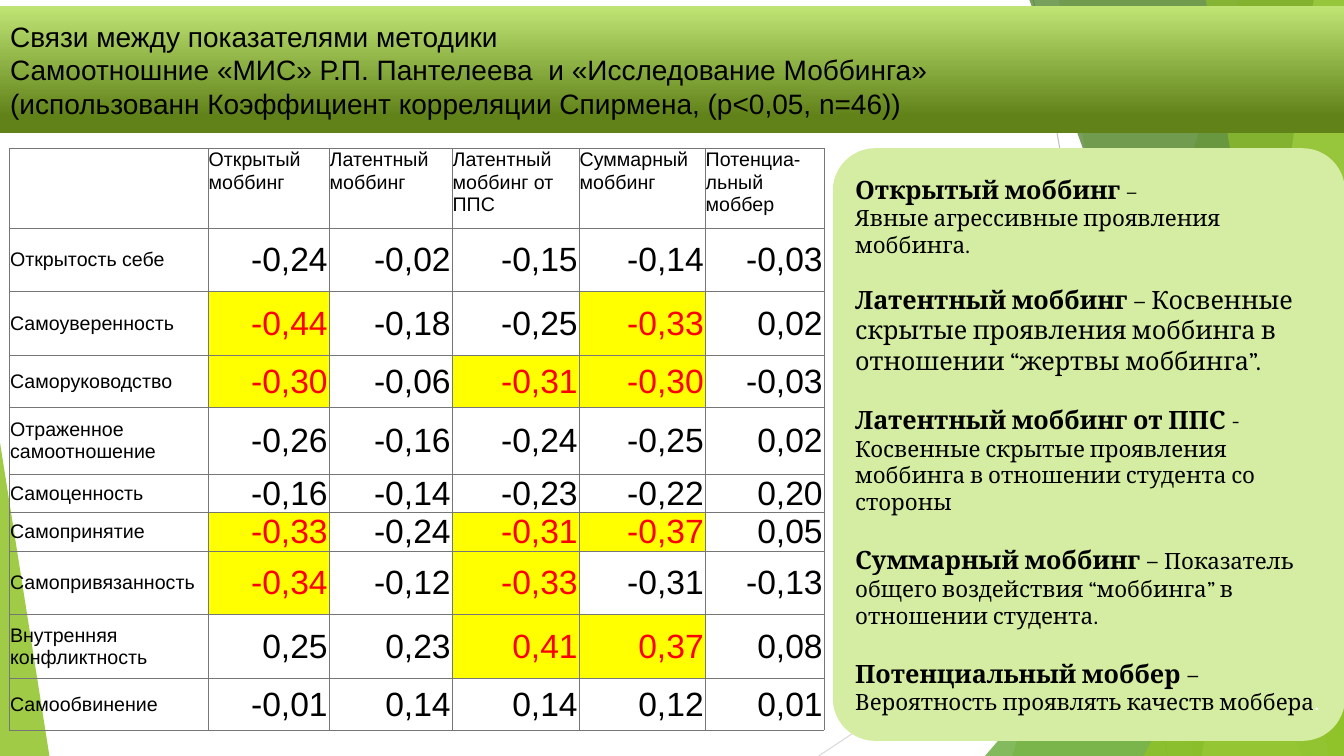
from lxml import etree
from pptx import Presentation
from pptx.dml.color import RGBColor
from pptx.enum.shapes import MSO_CONNECTOR, MSO_SHAPE
from pptx.enum.text import MSO_ANCHOR, PP_ALIGN
from pptx.oxml import parse_xml
from pptx.oxml.ns import qn
from pptx.util import Inches, Pt

LEFT, RIGHT = PP_ALIGN.LEFT, PP_ALIGN.RIGHT
TOP, MIDDLE = MSO_ANCHOR.TOP, MSO_ANCHOR.MIDDLE
A_NS = "http://schemas.openxmlformats.org/drawingml/2006/main"
WIDE, HIGH = 13.33, 7.5

TITLE = [
    "Связи между показателями методики\v"
    "Самоотношние «МИС» Р.П. Пантелеева  и «Исследование Моббинга»",
    "(использованн Коэффициент корреляции Спирмена, (р<0,05, n=46))",
]
HEADS = ["", "Открытый моббинг", "Латентный моббинг", "Латентный моббинг от ППС",
         "Суммарный моббинг", "Потенциа-льный моббер"]
# A star marks a highlighted coefficient
ROWS = [
    ("Открытость себе", "-0,24 -0,02 -0,15 -0,14 -0,03"),
    ("Самоуверенность", "-0,44* -0,18 -0,25 -0,33* 0,02"),
    ("Саморуководство", "-0,30* -0,06 -0,31* -0,30* -0,03"),
    ("Отраженное самоотношение", "-0,26 -0,16 -0,24 -0,25 0,02"),
    ("Самоценность", "-0,16 -0,14 -0,23 -0,22 0,20"),
    ("Самопринятие", "-0,33* -0,24 -0,31* -0,37* 0,05"),
    ("Самопривязанность", "-0,34* -0,12 -0,33* -0,31 -0,13"),
    ("Внутренняя конфликтность", "0,25 0,23 0,41* 0,37* 0,08"),
    ("Самообвинение", "-0,01 0,14 0,14 0,12 0,01"),
]
COLS = [1.97, 1.2, 1.22, 1.26, 1.25, 1.18]
HEIGHTS = [0.79, 0.63, 0.63, 0.52, 0.66, 0.37, 0.37, 0.63, 0.63, 0.52]

# Term, dash, dash size, meaning, meaning size, space before
TERMS = [
    ("Открытый моббинг ", "–", 16, "\vЯвные агрессивные проявления моббинга.", 16, 0),
    ("Латентный моббинг ", "– ", 18,
     "Косвенные скрытые проявления моббинга в отношении “жертвы моббинга”.", 18, 19),
    ("Латентный моббинг от ППС ", "- ", 18,
     "Косвенные скрытые проявления моббинга в отношении студента со стороны", 16, 21),
    ("Суммарный моббинг ", "– ", 18,
     "Показатель общего воздействия “моббинга” в отношении студента.", 16, 21),
    ("Потенциальный моббер ", "– ", 18, "Вероятность проявлять качеств моббера", 16, 21),
]

RAYS = [((10.25, 0), (11.58, HIGH), "BFBFBF"), ((WIDE, 4.03), (8.12, HIGH), "D9D9D9")]
# Bands run from the top edge to the bottom edge: top x, bottom x, colour, opacity
# Wedges are triangles: left, top, width, height, apex, colour, opacity
DECOR = [
    ("band", (12.28, 10.04), "90C226", 30),
    ("band", (10.5, 11.83), "90C226", 20),
    ("wedge", (9.77, 3.33, 3.56, 4.17, 1), "54A021", 72),
    ("band", (10.21, 12.91), "3F7819", 70),
    ("band", (13.03, 11.92), "C0E474", 70),
    ("band", (11.96, 13.18), "90C226", 65),
    ("wedge", (11.34, 3.93, 1.99, 3.57, 1), "90C226", 80),
    ("wedge", (0, 4.39, 0.49, 3.11, 0), "90C226", 85),
]


def rgb(code):
    return RGBColor.from_string(code)


def write(para, text, size=14, font="Arial", color="000000", bold=False, align=LEFT):
    para.alignment = align
    for i, part in enumerate(text.split("\v")):
        if i:
            para.add_line_break()
        if not part:
            continue
        run = para.add_run()
        run.text = part
        run.font.size, run.font.name, run.font.bold = Pt(size), font, bold
        run.font.color.rgb = rgb(color)


def paint(shape, color, alpha=100):
    shape.shadow.inherit = False
    shape.line.fill.background()
    shape.fill.solid()
    shape.fill.fore_color.rgb = rgb(color)
    if alpha < 100:
        tint = shape.fill._xPr.find(qn("a:solidFill"))[0]
        etree.SubElement(tint, qn("a:alpha"), val=str(alpha * 1000))


def draw_decor(shapes):
    for start, end, color in RAYS:
        ray = shapes.add_connector(MSO_CONNECTOR.STRAIGHT, *map(Inches, start + end))
        ray.line.color.rgb, ray.line.width = rgb(color), Pt(0.75)
        etree.SubElement(ray.element.spPr, qn("a:effectLst"))
    for kind, place, color, alpha in DECOR:
        if kind == "band":
            top, low = place
            pts = [(top, 0), (WIDE, 0), (WIDE, HIGH), (low, HIGH)]
            pts = [(Inches(x), Inches(y)) for x, y in pts]
            pen = shapes.build_freeform(*pts[0])
            pen.add_line_segments(pts[1:])
            shape = pen.convert_to_shape()
        else:
            shape = shapes.add_shape(MSO_SHAPE.ISOSCELES_TRIANGLE, *map(Inches, place[:4]))
            shape.adjustments[0] = place[4]
        paint(shape, color, alpha)


def draw_panel(shapes):
    panel = shapes.add_shape(MSO_SHAPE.ROUNDED_RECTANGLE, *map(Inches, (8.26, 1.47, 5.08, 5.88)))
    panel.adjustments[0] = 0.083
    paint(panel, "D5EDA2")
    frame = panel.text_frame
    frame.word_wrap, frame.vertical_anchor = True, MIDDLE
    for i, (term, dash, dash_size, meaning, size, gap) in enumerate(TERMS):
        para = frame.add_paragraph() if i else frame.paragraphs[0]
        para.space_before = Pt(gap)
        write(para, term, size=18, font="Cambria", bold=True)
        write(para, dash, size=dash_size, font="Cambria")
        write(para, meaning, size=size, font="Cambria")
    write(para, ".", size=16, font="Cambria", color="FFFFFF")


def edge(cell):
    for side in "LRTB":
        cell._tc.get_or_add_tcPr().append(parse_xml(
            f'<a:ln{side} xmlns:a="{A_NS}" w="3175"><a:solidFill>'
            f'<a:srgbClr val="767676"/></a:solidFill></a:ln{side}>'))


def draw_table(shapes):
    box = map(Inches, (0.09, 1.47, sum(COLS), sum(HEIGHTS)))
    table = shapes.add_table(len(HEIGHTS), len(COLS), *box).table
    table.first_row = table.horz_banding = False
    for col, width in zip(table.columns, COLS):
        col.width = Inches(width)
    grid = [HEADS] + [[name, *nums.split()] for name, nums in ROWS]
    for r, texts in enumerate(grid):
        table.rows[r].height = Inches(HEIGHTS[r])
        for c, text in enumerate(texts):
            cell = table.cell(r, c)
            edge(cell)
            cell.margin_left = cell.margin_right = cell.margin_top = Inches(0.01)
            cell.margin_bottom = 0
            cell.vertical_anchor = MIDDLE if r else TOP
            marked, number = text.endswith("*"), r > 0 and c > 0
            if marked:
                cell.fill.solid()
                cell.fill.fore_color.rgb = rgb("FFFF00")
            else:
                cell.fill.background()
            write(cell.text_frame.paragraphs[0], text.rstrip("*"), size=24 if number else 14,
                  color="FF0000" if marked else "000000", align=RIGHT if number else LEFT)


def draw_title(title):
    """Turn the title placeholder into the gradient banner, in front of the rest."""
    title.left, title.top, title.width, title.height = map(Inches, (0, 0.06, WIDE, 1.26))
    title.element.spPr.append(parse_xml(
        f'<a:prstGeom xmlns:a="{A_NS}" prst="flowChartDelay"><a:avLst/></a:prstGeom>'))
    title.fill.gradient()
    title.fill.gradient_angle = 90
    for stop, place, color in zip(title.fill.gradient_stops, (0.13, 1), ("608219", "C0E474")):
        stop.position, stop.color.rgb = place, rgb(color)
    frame = title.text_frame
    frame.word_wrap, frame.vertical_anchor = True, MIDDLE
    for i, text in enumerate(TITLE):
        para = frame.add_paragraph() if i else frame.paragraphs[0]
        para.space_before, para.line_spacing = Pt(0), 1.0
        write(para, text, size=20)
    title.element.getparent().append(title.element)


def main():
    deck = Presentation()
    deck.slide_width, deck.slide_height = Inches(WIDE), Inches(HIGH)
    slide = deck.slides.add_slide(deck.slide_layouts[5])
    draw_decor(slide.shapes)
    draw_panel(slide.shapes)
    draw_table(slide.shapes)
    draw_title(slide.shapes.title)
    deck.save("out.pptx")


if __name__ == "__main__":
    main()
